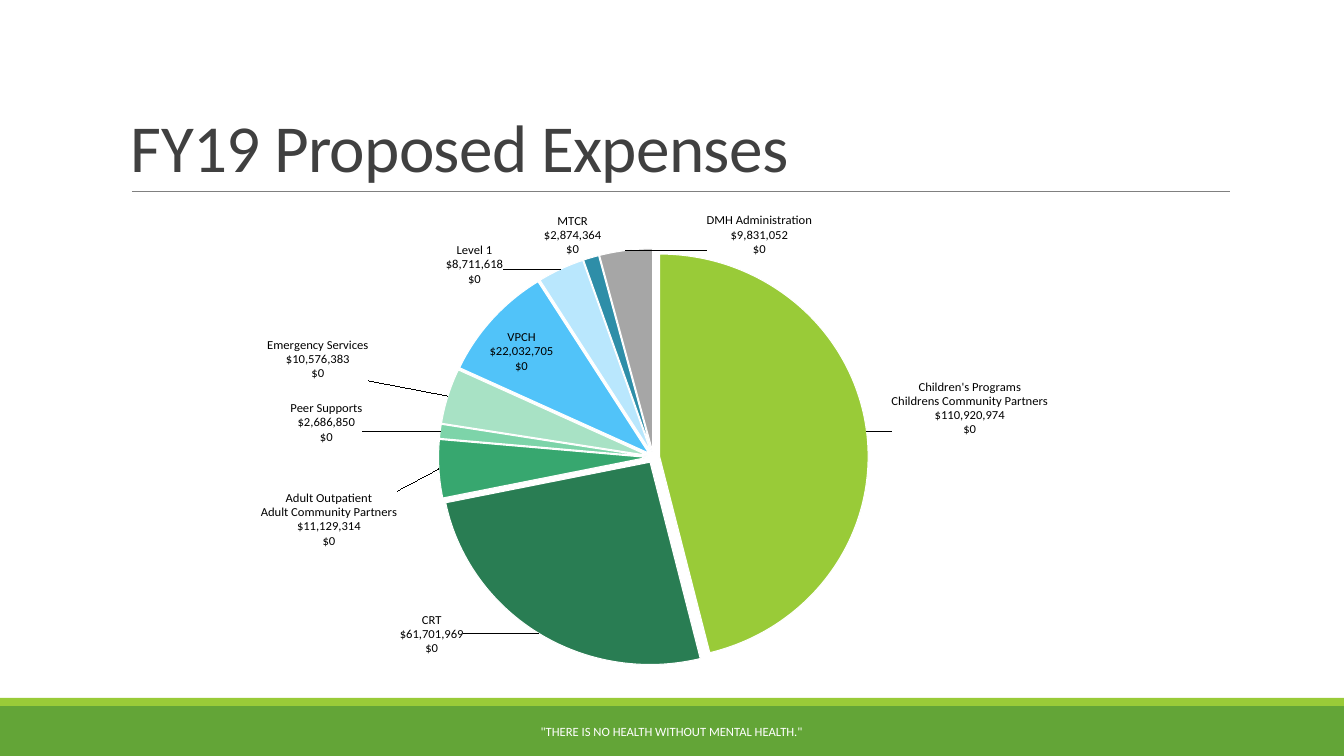
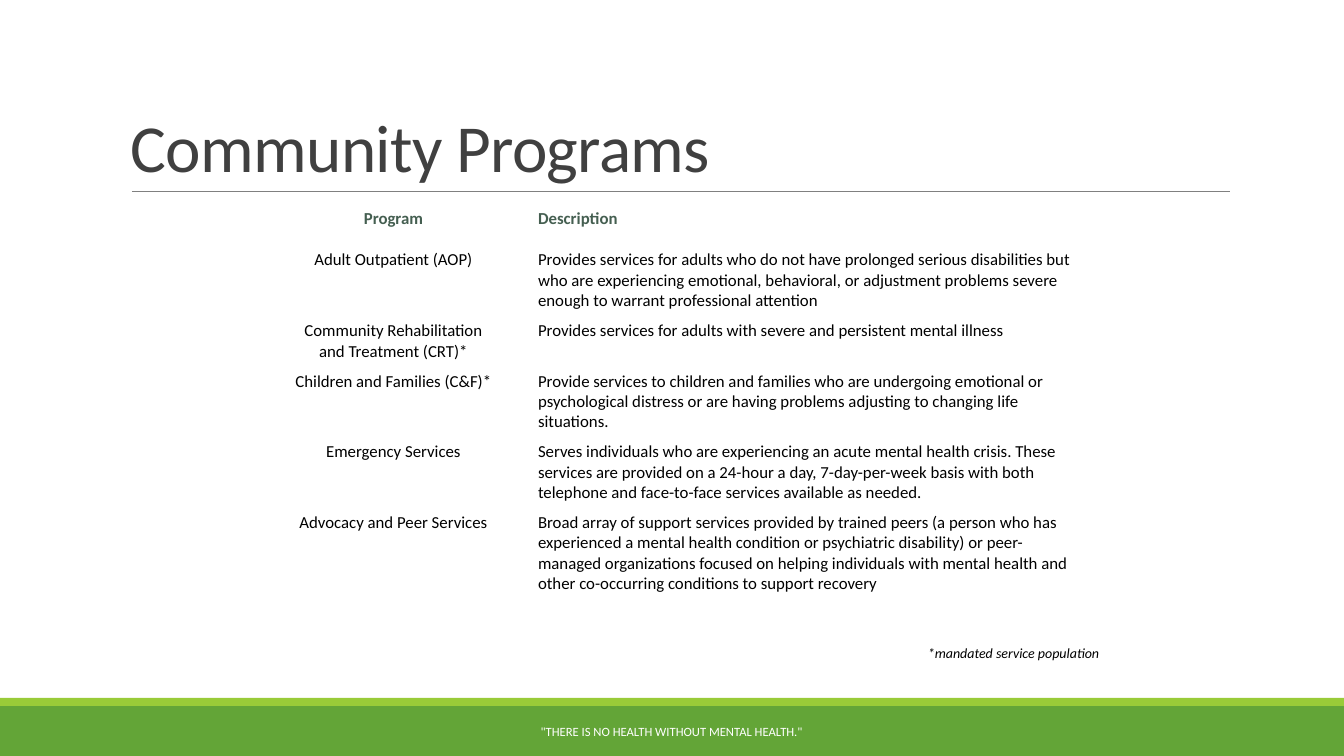
from copy import deepcopy

from lxml.etree import SubElement
from pptx import Presentation
from pptx.chart.data import CategoryChartData
from pptx.dml.color import RGBColor
from pptx.enum.chart import XL_CHART_TYPE as ChartType, XL_LABEL_POSITION as LabelPosition
from pptx.enum.shapes import MSO_CONNECTOR as Connector, MSO_SHAPE as Shape
from pptx.enum.text import MSO_ANCHOR as Anchor, PP_ALIGN as Align
from pptx.oxml import parse_xml
from pptx.oxml.ns import nsdecls, qn
from pptx.util import Pt

EMU_PER_PX = 12192000 / 1344
FONT = "Calibri"
DOLLARS = '"$"#,##0'
FOOTER = '"THERE IS NO HEALTH WITHOUT MENTAL HEALTH."'
COLORS = {
    "band": "63A537", "lime": "99CB38", "rule": "808080", "title": "404040",
    "heading": "455F51", "text": "000000", "white": "FFFFFF",
    "forest": "297D53", "green": "37A76F", "mint": "7DD4A9", "pale_mint": "A8E2C5",
    "sky": "51C3F9", "pale_sky": "B9E7FD", "teal": "2E8EA8", "gray": "A6A6A6",
}
EXPENSES = [
    ("Children's Programs\nChildrens Community Partners", 110920974, "lime", (19, 6)),
    ("CRT", 61701969, "forest", (-72, -26)),
    ("Adult Outpatient\nAdult Community Partners", 11129314, "green", (-36, 52)),
    ("Peer Supports", 2686850, "mint", (-72, 14)),
    ("Emergency Services", 10576383, "pale_mint", (-74, -14)),
    ("VPCH", 22032705, "sky", None),
    ("Level 1", 8711618, "pale_sky", (-55, 23)),
    ("MTCR", 2874364, "teal", (12, 5)),
    ("DMH Administration", 9831052, "gray", (187, 12)),
]
PROGRAMS = [
    ("Program", "Description"),
    ("Adult Outpatient (AOP)",
     "Provides services for adults who do not have prolonged serious disabilities but who are "
     "experiencing emotional, behavioral, or adjustment problems severe enough to warrant "
     "professional attention"),
    ("Community Rehabilitation\nand Treatment (CRT)*",
     "Provides services for adults with severe and persistent mental illness"),
    ("Children and Families (C&F)*",
     "Provide services to children and families who are undergoing emotional or psychological "
     "distress or are having problems adjusting to changing life situations."),
    ("Emergency Services",
     "Serves individuals who are experiencing an acute mental health crisis. These services are "
     "provided on a 24-hour a day, 7-day-per-week basis with both telephone and face-to-face "
     "services available as needed."),
    ("Advocacy and Peer Services",
     "Broad array of support services provided by trained peers (a person who has experienced a "
     "mental health condition or psychiatric disability) or peer-managed organizations focused on "
     "helping individuals with mental health and other co-occurring conditions to support recovery"),
]


def px(*lengths):
    """Turn pixel lengths into a list of EMU."""
    return [round(length * EMU_PER_PX) for length in lengths]


def color(name):
    """Look up a named colour."""
    return RGBColor.from_string(COLORS[name])


def manual_layout(target=None, **values):
    """Build a chart layout element from fractions of the chart."""
    layout = parse_xml(f"<c:layout {nsdecls('c')}/>")
    manual = SubElement(layout, qn("c:manualLayout"))
    settings = {"layoutTarget": target, "xMode": "edge", "yMode": "edge"} if target else {}
    for tag, value in (settings | values).items():
        SubElement(manual, qn(f"c:{tag}")).set("val", str(value))
    return layout


class Deck:
    """Hold the shared style and the current page."""

    def __init__(self):
        """Open an empty wide presentation."""
        self.deck = Presentation()
        self.deck.slide_width, self.deck.slide_height = px(1344, 756)

    def page(self, title):
        """Start a page with its bands, rule, title and footer."""
        self.shapes = self.deck.slides.add_slide(self.deck.slide_layouts[6]).shapes
        self.band(706, 50, "band")
        self.band(698, 8, "lime")
        self.rule(132, 1230, 191)
        para = self.text(title, (121, 31, 1109, 160), 48, "title", anchor=Anchor.BOTTOM)
        para.line_spacing = 0.85
        para.runs[0].font._element.set("spc", "-50")
        self.text(FOOTER, (406, 712, 531, 40), 9, "white", Align.CENTER, Anchor.MIDDLE)

    def band(self, top, height, fill):
        """Draw a full-width band."""
        band = self.shapes.add_shape(Shape.RECTANGLE, *px(0, top, 1344, height))
        band.shadow.inherit = False
        band.fill.solid()
        band.fill.fore_color.rgb = color(fill)
        band.line.fill.background()

    def rule(self, left, right, y):
        """Draw a thin horizontal line."""
        rule = self.shapes.add_connector(Connector.STRAIGHT, *px(left, y, right, y))
        rule.line.color.rgb = color("rule")
        rule.line.width = Pt(0.5)
        SubElement(rule._element.spPr, qn("a:effectLst"))

    def add_span(self, para, text, size, ink, align=Align.LEFT, bold=False, italic=False):
        """Add one styled run to a paragraph."""
        para.alignment = align
        span = para.add_run()
        span.text = text
        font = span.font
        font.name, font.size, font.bold, font.italic = FONT, Pt(size), bold, italic
        font.color.rgb = color(ink)

    def text(self, text, place, size, ink, align=Align.LEFT, anchor=Anchor.TOP, italic=False):
        """Add a one-paragraph text box and return its paragraph."""
        frame = self.shapes.add_textbox(*px(*place)).text_frame
        frame.word_wrap = True
        frame.vertical_anchor = anchor
        para = frame.paragraphs[0]
        self.add_span(para, text, size, ink, align, italic=italic)
        return para

    def table(self, rows, left, top, widths, row_height):
        """Add a plain table with a bold heading row."""
        place = px(left, top, sum(widths), row_height * len(rows))
        table = self.shapes.add_table(len(rows), len(widths), *place).table
        table.first_row = table.horz_banding = False
        for column, width in zip(table.columns, px(*widths)):
            column.width = width
        for r, texts in enumerate(rows):
            table.rows[r].height = px(row_height)[0]
            for c, text in enumerate(texts):
                cell = table.cell(r, c)
                cell.fill.background()
                frame = cell.text_frame
                for n, line in enumerate(text.split("\n")):
                    para = frame.add_paragraph() if n else frame.paragraphs[0]
                    self.add_span(para, line, 12, "text" if r else "heading",
                                  Align.LEFT if c else Align.CENTER, bold=r == 0)

    def pie(self, slices, left, top, width, height):
        """Add an exploded pie chart with placed labels."""
        names, values, fills, offsets = zip(*slices)
        data = CategoryChartData(number_format=DOLLARS)
        data.categories = names
        data.add_series("Series 1", values)
        place = px(left, top, width, height)
        chart = self.shapes.add_chart(ChartType.PIE, *place, data).chart
        chart.has_title = chart.has_legend = False
        chart.font.name, chart.font.size = FONT, Pt(18)
        plot = chart.plots[0]
        plot.vary_by_categories = True
        area = plot._element.getparent()
        for layout in area.findall(qn("c:layout")):
            area.remove(layout)
        area.insert(0, manual_layout("inner", x=0.211, y=0.087, w=0.557, h=0.897))
        series = plot.series[0]
        for n, fill in enumerate(fills):
            style = series.points[n].format
            style.fill.solid()
            style.fill.fore_color.rgb = color(fill)
            style.line.color.rgb = color("white")
            style.line.width = Pt(0.75)
        explosion = parse_xml(f'<c:explosion {nsdecls("c")} val="3"/>')
        series._element.find(qn("c:dPt")).addprevious(explosion)
        self.pie_labels(series.data_labels, [
            offset and (offset[0] / width, offset[1] / height) for offset in offsets])

    def pie_labels(self, labels, shifts):
        """Style the labels and shift each one from its usual place."""
        labels.show_value = labels.show_category_name = labels.show_percentage = True
        labels.number_format = DOLLARS
        labels.number_format_is_linked = False
        labels.position = LabelPosition.BEST_FIT
        labels.font.name, labels.font.size = FONT, Pt(9)
        labels.font.color.rgb = color("text")
        group = labels._element
        separator = parse_xml(f"<c:separator {nsdecls('c')}>\n</c:separator>")
        group.find(qn("c:showBubbleSize")).addnext(separator)
        shared = [part for part in group if part.tag != qn("c:showLeaderLines")]
        for n, shift in enumerate(shifts):
            label = parse_xml(f'<c:dLbl {nsdecls("c")}><c:idx val="{n}"/></c:dLbl>')
            if shift:
                label.append(manual_layout(x=round(shift[0], 4), y=round(shift[1], 4)))
            label.extend(deepcopy(part) for part in shared)
            group.insert(n, label)


def main():
    """Build and save both pages."""
    deck = Deck()
    deck.page("FY19 Proposed Expenses")
    deck.pie(EXPENSES, 230, 202, 865, 479)
    deck.page("Community Programs")
    deck.table(PROGRAMS, 259, 204, (269, 562), 41)
    deck.text("*mandated service population", (269, 640, 840, 27), 10, "text",
              Align.RIGHT, italic=True)
    deck.deck.save("out.pptx")


if __name__ == "__main__":
    main()
